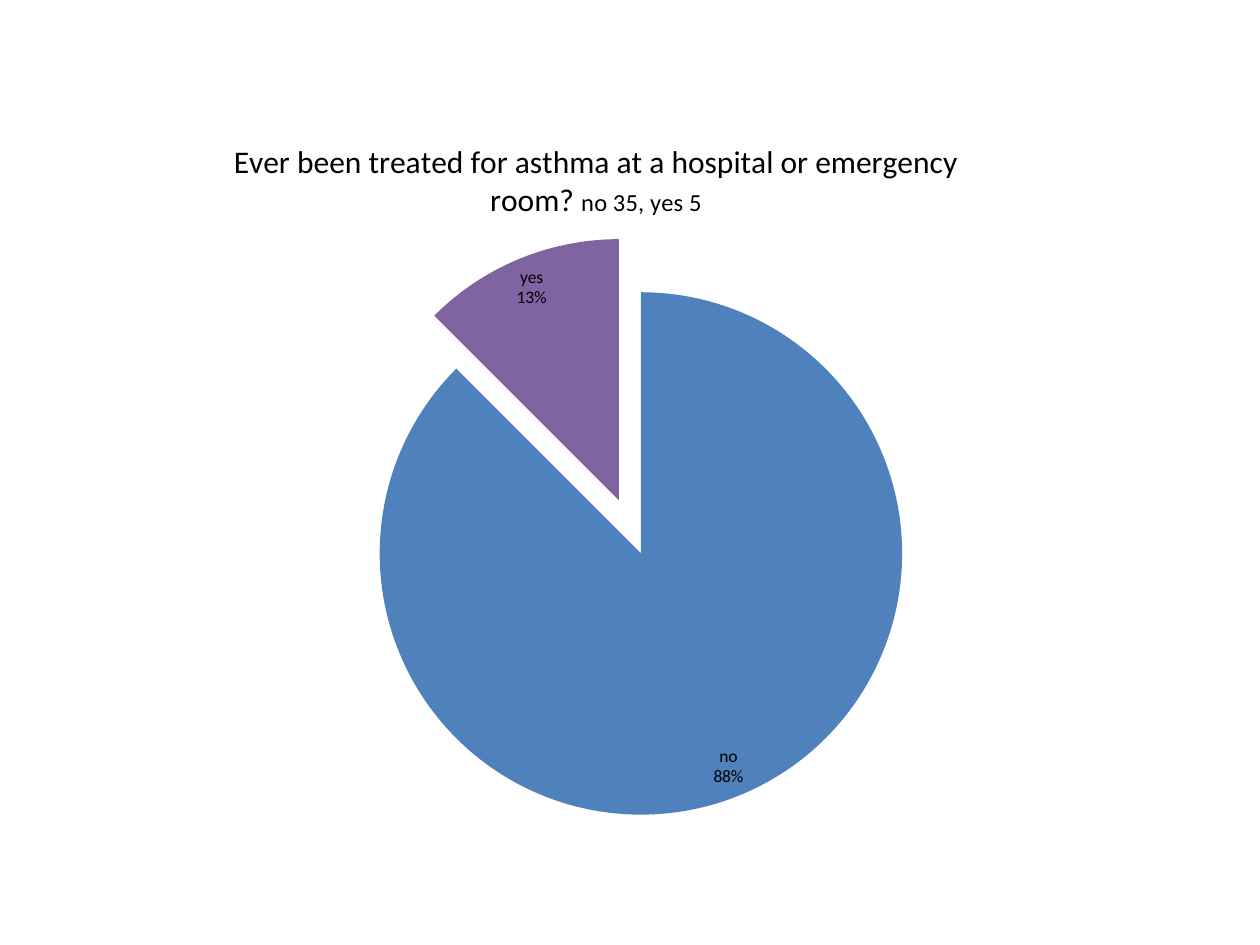
import pptx
import pptx.chart.data
import pptx.dml.color
import pptx.enum.chart
import pptx.oxml
import pptx.oxml.ns
import pptx.util

PX = 914400 // 126
WIDTH, HEIGHT = 999, 725  # chart frame in px
FONT = "Calibri"
COLORS = {
    "text": "000000",
    "no": "4F81BD",
    "red": "C0504D",
    "green": "9BBB59",
    "yes": "8064A2",
}
COUNTS = [("no", 35), ("", None), ("", None), ("yes", 5)]
SLICES = ["no", "red", "green", "yes"]


def color(name):
    return pptx.dml.color.RGBColor.from_string(COLORS[name])


def style(font, size):
    font.name = FONT
    font.size = pptx.util.Pt(size)
    font.bold = False
    font.color.rgb = color("text")


def place(parent, **sides):
    """Return a manual layout for px measured inside the chart frame."""
    marks = "".join(f'<c:{k}Mode val="edge"/>' for k in "xy")
    spans = {"x": WIDTH, "y": HEIGHT, "w": WIDTH, "h": HEIGHT}
    vals = "".join(f'<c:{k} val="{v / spans[k]}"/>' for k, v in sides.items())
    target = '<c:layoutTarget val="inner"/>' if "w" in sides else ""
    names = pptx.oxml.ns.nsdecls("c")
    for old in parent.findall(pptx.oxml.ns.qn("c:layout")):
        parent.remove(old)
    return pptx.oxml.parse_xml(
        f"<c:layout {names}><c:manualLayout>{target}{marks}{vals}"
        "</c:manualLayout></c:layout>")


def add_pie(slide, left, top):
    data = pptx.chart.data.CategoryChartData()
    data.categories = [name for name, _ in COUNTS]
    data.add_series("Series 1", [count for _, count in COUNTS])
    box = [v * PX for v in (left, top, WIDTH, HEIGHT)]
    chart = slide.shapes.add_chart(
        pptx.enum.chart.XL_CHART_TYPE.PIE, *box, data).chart
    style(chart.font, 10)
    chart.has_legend = False
    return chart


def add_title(chart, runs):
    chart.has_title = True
    para = chart.chart_title.text_frame.paragraphs[0]
    for text, size in runs:
        run = para.add_run()
        run.text = text
        style(run.font, size)
    title = chart.chart_title._element
    layout = place(title, x=100, y=26)
    title.find(pptx.oxml.ns.qn("c:tx")).addnext(layout)


def paint(chart):
    plot = chart.plots[0]
    plot.vary_by_categories = True
    series = plot.series[0]
    for i, name in enumerate(SLICES):
        fill = series.points[i].format.fill
        fill.solid()
        fill.fore_color.rgb = color(name)
    # All slices pulled out from the centre
    burst = pptx.oxml.parse_xml(
        f'<c:explosion {pptx.oxml.ns.nsdecls("c")} val="11"/>')
    series._element.find(pptx.oxml.ns.qn("c:dPt")).addprevious(burst)


def label(chart):
    plot = chart.plots[0]
    plot.has_data_labels = True
    labels = plot.data_labels
    labels.show_category_name = True
    labels.show_percentage = True
    labels.show_value = False
    labels.number_format = "0%"
    labels.number_format_is_linked = False
    labels.position = pptx.enum.chart.XL_LABEL_POSITION.BEST_FIT
    style(labels.font, 10)


def main():
    deck = pptx.Presentation()
    deck.slide_width = 1260 * PX
    deck.slide_height = 945 * PX
    slide = deck.slides.add_slide(deck.slide_layouts[6])

    # Pie chart with its title and labels
    chart = add_pie(slide, 130, 111)
    add_title(chart, [
        ("Ever been treated for asthma at a hospital or emergency room? ", 18),
        ("no 35, yes 5", 14),
    ])
    paint(chart)
    label(chart)

    # Plot area below the title
    area = chart._chartSpace.chart.plotArea
    area.insert(0, place(area, x=210, y=126, w=580, h=580))
    deck.save("out.pptx")


if __name__ == "__main__":
    main()
